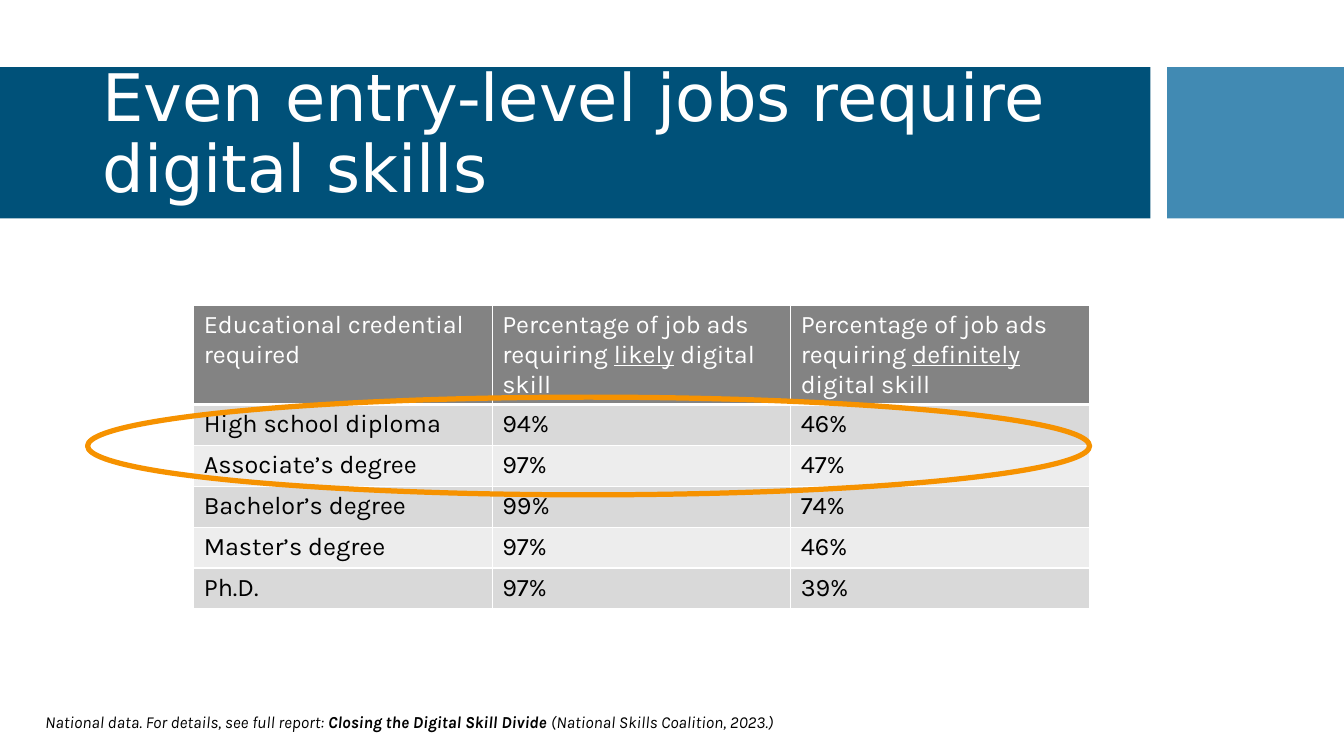
from lxml.etree import SubElement
from pptx import Presentation
from pptx.dml.color import RGBColor
from pptx.enum.shapes import MSO_SHAPE
from pptx.enum.text import MSO_ANCHOR, MSO_AUTO_SIZE, PP_ALIGN
from pptx.oxml.ns import qn
from pptx.util import Pt


def color(value):
    return RGBColor.from_string(value)


def style(span, size, name, value):
    span.font.size = Pt(size)
    span.font.name = name
    span.font.color.rgb = color(value)


deck = Presentation()
deck.slide_width, deck.slide_height = Pt(960), Pt(540)
page = deck.slides.add_slide(deck.slide_layouts[5])

# Title bands, kept behind the title
bands = [(0, 821.8, "005179"), (833.6, 126.4, "418AB3")]
for position, (left, width, fill) in enumerate(bands, start=2):
    band = page.shapes.add_shape(MSO_SHAPE.RECTANGLE, Pt(left), Pt(48), Pt(width), Pt(108))
    band.shadow.inherit = False
    band.fill.solid()
    band.fill.fore_color.rgb = color(fill)
    band.line.fill.background()
    page.shapes._spTree.insert(position, band._element)

# Title
title = page.shapes.title
title.left, title.top, title.width, title.height = Pt(66), Pt(49.7), Pt(739), Pt(95)
title.text_frame.text = "Even entry-level jobs require digital skills"
title.text_frame.word_wrap = True
title.text_frame.auto_size = MSO_AUTO_SIZE.NONE
title.text_frame.vertical_anchor = MSO_ANCHOR.MIDDLE
heading = title.text_frame.paragraphs[0]
heading.alignment = PP_ALIGN.LEFT
heading.line_spacing = 0.9
style(heading.runs[0], 46.8, "DejaVu Sans", "FFFFFF")

# Table: each cell is a list of text spans, the second one underlined
rows = [
    [["Educational credential required"],
     ["Percentage of job ads requiring ", "likely", " digital skill"],
     ["Percentage of job ads requiring ", "definitely", " digital skill"]],
    [["High school diploma"], ["94%"], ["46%"]],
    [["Associate’s degree"], ["97%"], ["47%"]],
    [["Bachelor’s degree"], ["99%"], ["74%"]],
    [["Master’s degree"], ["97%"], ["46%"]],
    [["Ph.D."], ["97%"], ["39%"]],
]
table = page.shapes.add_table(6, 3, Pt(138.4), Pt(218.4), Pt(639.6), Pt(216)).table
for column in table.columns:
    column.width = Pt(213.2)
for row_number, spans_by_cell in enumerate(rows):
    is_header = row_number == 0
    table.rows[row_number].height = Pt(70 if is_header else 29.2)
    fill = "838383" if is_header else ("D9D9D9" if row_number % 2 else "EDEDED")
    for column_number, spans in enumerate(spans_by_cell):
        cell = table.cell(row_number, column_number)
        for side in ("lnL", "lnR", "lnT", "lnB"):
            width = 3 if is_header and side == "lnB" else 1
            border = SubElement(cell._tc.get_or_add_tcPr(), qn(f"a:{side}"), w=str(Pt(width)))
            SubElement(SubElement(border, qn("a:solidFill")), qn("a:srgbClr"), val="FFFFFF")
        cell.fill.solid()
        cell.fill.fore_color.rgb = color(fill)
        para = cell.text_frame.paragraphs[0]
        for span_number, text in enumerate(spans):
            span = para.add_run()
            span.text = text
            style(span, 18, "Karla", "FFFFFF" if is_header else "000000")
            span.font.bold = False
            span.font.underline = span_number == 1

# Ring around the entry-level rows
ring = page.shapes.add_shape(MSO_SHAPE.OVAL, Pt(62.6), Pt(283.7), Pt(715.7), Pt(69.8))
ring.shadow.inherit = False
ring.fill.background()
ring.line.color.rgb = color("F69200")
ring.line.width = Pt(3.75)

# Source note
note = page.shapes.add_textbox(Pt(25.2), Pt(504.7), Pt(612), Pt(21.6))
note.text_frame.word_wrap = True
para = note.text_frame.paragraphs[0]
for text, bold in [
    ("National data. For details, see full report: ", False),
    ("Closing the Digital Skill Divide ", True),
    ("(National Skills Coalition, 2023.)", False),
]:
    span = para.add_run()
    span.text = text
    style(span, 12, "Karla", "000000")
    span.font.italic = True
    span.font.bold = bold

deck.save("out.pptx")
